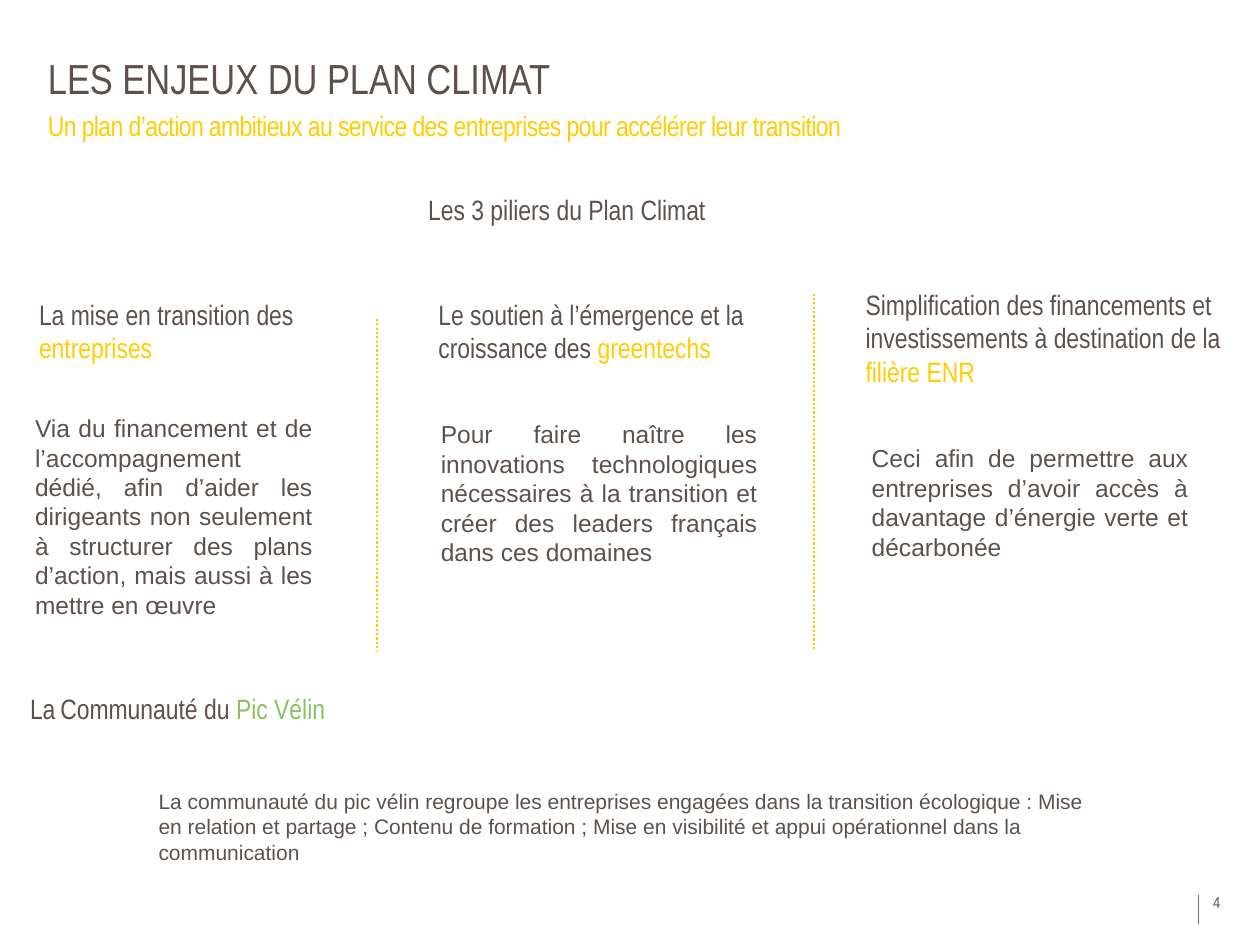
from collections import namedtuple

from pptx import Presentation
from pptx.dml.color import RGBColor
from pptx.enum.dml import MSO_LINE
from pptx.enum.shapes import MSO_CONNECTOR
from pptx.enum.text import MSO_ANCHOR, MSO_AUTO_SIZE, PP_ALIGN
from pptx.oxml.ns import qn
from pptx.util import Inches, Pt

# Grid of 100 columns by 75 rows; boxes are given in columns and rows
W, H = Inches(10), Inches(7.5)
COL, ROW = W / 100, H / 75
Box = namedtuple("Box", "x y w h")

BROWN, YELLOW, GREEN, GREY, DOTS = "5E514D", "FFCD00", "8BC15E", "786E64", "F9C800"
NARROW, ARIAL = "Arial Narrow", "Arial"


def color(hex_string):
    return RGBColor.from_string(hex_string)


def emu(box):
    return int(box.x * COL), int(box.y * ROW), int(box.w * COL), int(box.h * ROW)


def add_run(p, text, hex_color=BROWN, size=16, font=NARROW, italic=False):
    r = p.add_run()
    r.text = text
    r.font.name, r.font.size, r.font.italic = font, Pt(size), italic
    r.font.color.rgb = color(hex_color)
    return r


def set_insets(tf, side, top):
    tf.margin_left = tf.margin_right = Inches(side)
    tf.margin_top = tf.margin_bottom = Inches(top)


def add_text(slide, box, insets=(0.1, 0.05), align=PP_ALIGN.LEFT):
    """Add an empty text box and return its first paragraph."""
    tf = slide.shapes.add_textbox(*emu(box)).text_frame
    tf.word_wrap = True
    set_insets(tf, *insets)
    p = tf.paragraphs[0]
    p.alignment = align
    return p


def add_line(slide, x, top, bottom, hex_color, width, dash=None):
    sp = slide.shapes.add_connector(
        MSO_CONNECTOR.STRAIGHT, int(x * COL), int(top * ROW), int(x * COL), int(bottom * ROW))
    sp.line.color.rgb = color(hex_color)
    sp.line.width = Pt(width)
    if dash:
        sp.line.dash_style = dash
    sp._element.spPr.append(sp._element.makeelement(qn("a:effectLst"), {}))


def add_header(slide, box, title, subtitle):
    sp = slide.shapes.title
    sp.left, sp.top, sp.width, sp.height = emu(box._replace(h=7.1))
    tf = sp.text_frame
    tf.auto_size, tf.word_wrap = MSO_AUTO_SIZE.NONE, True
    tf.vertical_anchor = MSO_ANCHOR.BOTTOM
    set_insets(tf, 0, 0)
    p = tf.paragraphs[0]
    p.alignment, p.line_spacing = PP_ALIGN.LEFT, 0.85
    add_run(p, title, size=24)

    p = add_text(slide, box._replace(y=box.y + 7.9, h=box.h - 7.9), insets=(0, 0))
    p.line_spacing = 0.85
    r = add_run(p, subtitle, YELLOW)
    r.font._element.set("spc", "-30")


def add_pillar(slide, box, heading, keyword, body, body_box):
    """Heading fills the box; body_box is relative to the corner of the box."""
    p = add_text(slide, box, insets=(0.07, 0.03))
    add_run(p, heading)
    add_run(p, keyword, YELLOW)
    place = body_box._replace(x=box.x + body_box.x, y=box.y + body_box.y)
    add_run(add_text(slide, place, align=PP_ALIGN.JUSTIFY), body, size=14, font=ARIAL)


def add_community(slide, box):
    p = add_text(slide, box._replace(w=56.4, h=3.7), align=PP_ALIGN.JUSTIFY)
    add_run(p, "La")
    add_run(p, " ", GREY, size=10, font=ARIAL, italic=True)
    add_run(p, "Communauté du ")
    add_run(p, "Pic Vélin", GREEN)
    p = add_text(slide, Box(box.x + 10.2, box.y + 7.7, box.w - 10.2, box.h - 7.7))
    add_run(p, "La communauté du pic vélin regroupe les entreprises engagées dans la "
               "transition écologique : Mise en relation et partage ; Contenu de formation ; "
               "Mise en visibilité et appui opérationnel dans la communication",
            size=12, font=ARIAL)


def add_page_number(slide, box, number):
    add_line(slide, box.x, box.y + 0.6, box.y + 2.9, GREY, 0.75)
    add_run(add_text(slide, box._replace(x=box.x + 0.2)), number, size=9)


PILLARS = [
    (Box(2.4, 23.3, 22.6, 6.1), "La mise en transition des ", "entreprises",
     "Via du financement et de l’accompagnement dédié, afin d’aider les dirigeants non "
     "seulement à structurer des plans d’action, mais aussi à les mettre en œuvre",
     Box(-0.6, 9, 24, 17.6)),
    (Box(34.1, 23.3, 27.3, 8.8), "Le soutien à l’émergence et la croissance des ", "greentechs",
     "Pour faire naître les innovations technologiques nécessaires à la transition et "
     "créer des leaders français dans ces domaines",
     Box(-0.1, 9.5, 27.1, 12.8)),
    (Box(68, 22.5, 32, 8.8),
     "Simplification des financements et investissements à destination de la ", "filière ENR",
     "Ceci afin de permettre aux entreprises d’avoir accès à davantage d’énergie verte "
     "et décarbonée",
     Box(0.2, 12.2, 27.1, 10.4)),
]


def main():
    prs = Presentation()
    prs.slide_width, prs.slide_height = W, H
    slide = prs.slides.add_slide(prs.slide_layouts[5])

    # Title and subtitle
    add_header(slide, Box(3.8, 1.1, 92.7, 15.7), "LES ENJEUX DU PLAN CLIMAT",
               "Un plan d’action ambitieux au service des entreprises pour accélérer "
               "leur transition")

    # Three pillars and the dotted lines between them
    add_run(add_text(slide, Box(33, 14.8, 34.3, 3.7)), "Les 3 piliers du Plan Climat")
    for pillar in PILLARS:
        add_pillar(slide, *pillar)
    for x, top in ((29.9, 25.3), (64.6, 23.3)):
        add_line(slide, x, top, 51.7, DOTS, 1.25, MSO_LINE.ROUND_DOT)

    # Community and page number
    add_community(slide, Box(1.4, 54.4, 87.1, 14.8))
    add_page_number(slide, Box(95.1, 70.4, 4.7, 3.4), "4")

    prs.save("out.pptx")


if __name__ == "__main__":
    main()
